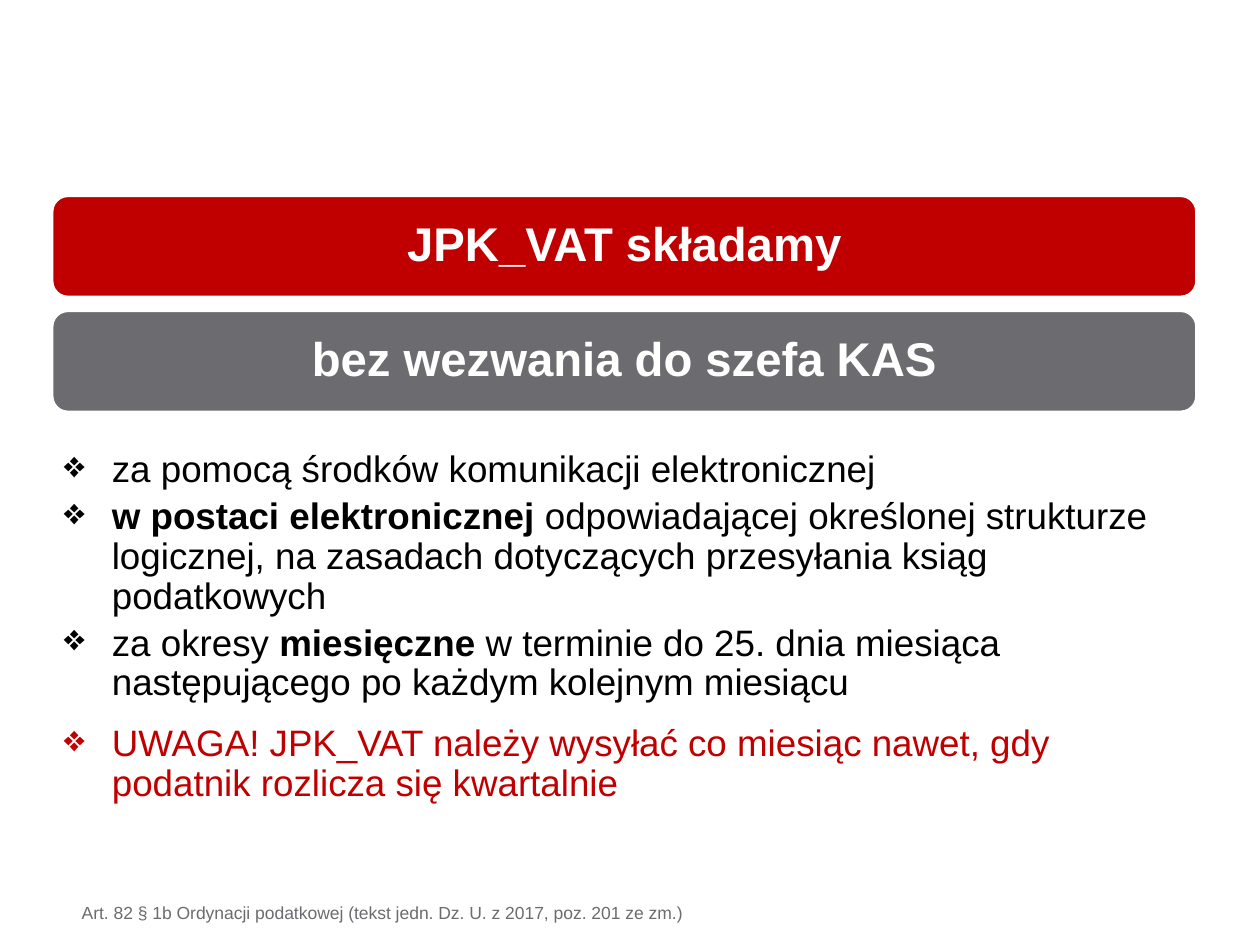
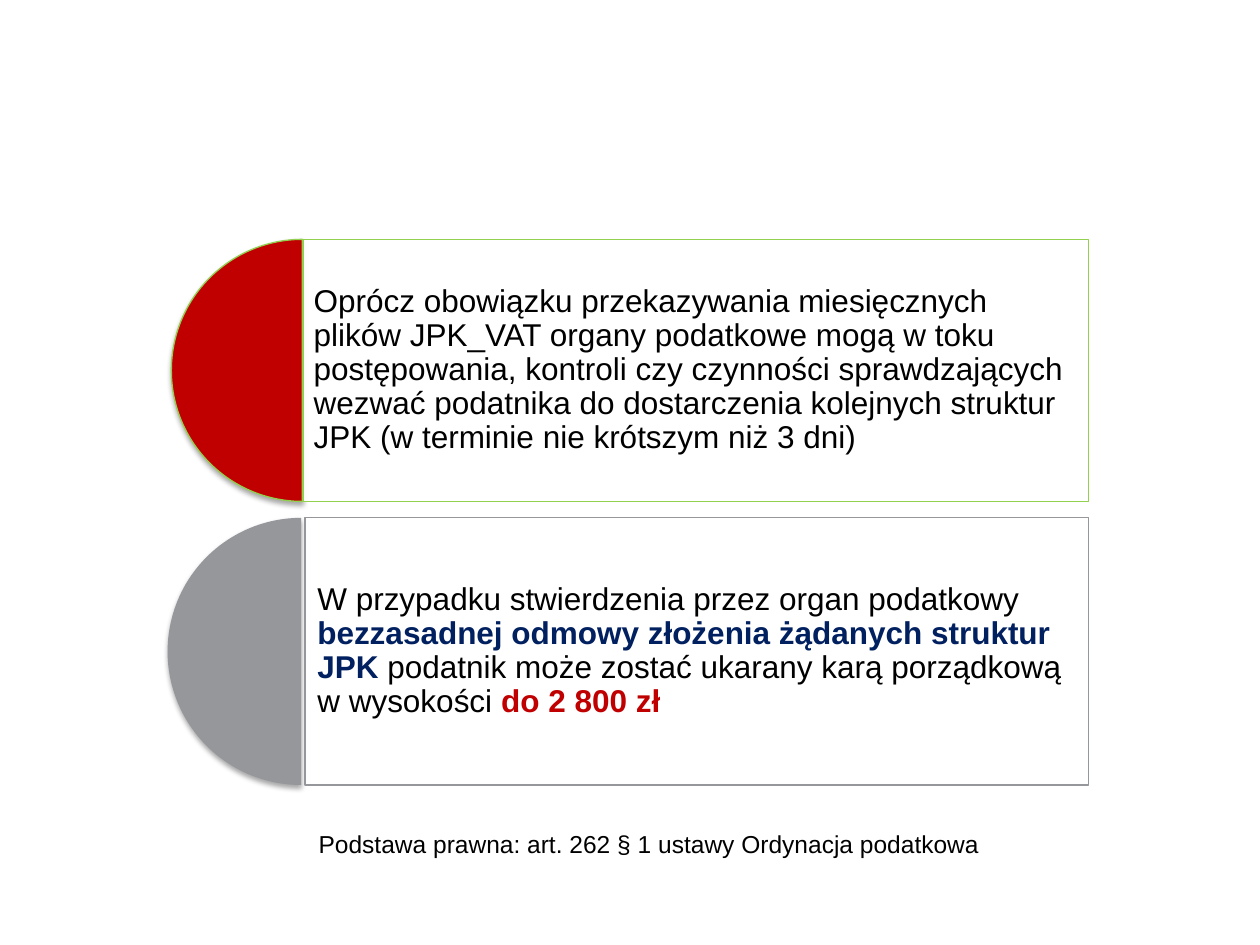
from pptx import Presentation
from pptx.dml.color import RGBColor
from pptx.enum.shapes import MSO_SHAPE
from pptx.enum.text import MSO_ANCHOR, PP_ALIGN
from pptx.oxml import parse_xml
from pptx.oxml.ns import nsdecls
from pptx.util import Inches, Pt

RED = RGBColor(0xC0, 0x00, 0x00)
GREY = RGBColor(0x6C, 0x6C, 0x70)
PALE = RGBColor(0x95, 0x97, 0x9B)
GREEN = RGBColor(0x92, 0xD0, 0x50)
NAVY = RGBColor(0x00, 0x20, 0x60)
BLACK = RGBColor(0x00, 0x00, 0x00)
WHITE = RGBColor(0xFF, 0xFF, 0xFF)
FONT = "Arial"

deck = Presentation()
deck.slide_width = Inches(10)
deck.slide_height = Inches(7.5)
blank = deck.slide_layouts[6]

# Grid of 100 columns by 100 rows
COL = deck.slide_width / 100
ROW = deck.slide_height / 100


def place(slide, kind, left, top, wide, high, fill=None, line=None, width=0.75):
    """Put a shape, or a text box when kind is None, on the grid."""
    spot = [int(n) for n in (left * COL, top * ROW, wide * COL, high * ROW)]
    if kind is None:
        shape = slide.shapes.add_textbox(*spot)
    else:
        shape = slide.shapes.add_shape(kind, *spot)
        shape.shadow.inherit = False
        shape.fill.solid()
        shape.fill.fore_color.rgb = fill
        if line is None:
            shape.line.fill.background()
        else:
            shape.line.color.rgb = line
            shape.line.width = Pt(width)
    shape.text_frame.word_wrap = True
    return shape


def write(para, runs, size):
    """Add runs given as (text, colour, bold)."""
    for text, tone, bold in runs:
        run = para.add_run()
        run.text = text
        run.font.name = FONT
        run.font.size = Pt(size)
        run.font.bold = bold
        run.font.color.rgb = tone


# Slide 1: how the file is sent
slide = deck.slides.add_slide(blank)

# Title bands
bands = [("JPK_VAT składamy", RED), ("bez wezwania do szefa KAS", GREY)]
for i, (text, tone) in enumerate(bands):
    band = place(slide, MSO_SHAPE.ROUNDED_RECTANGLE, 4.1, 20.67 + 12.17 * i,
                 90.9, 10.8, tone, WHITE, 2)
    band.adjustments[0] = 0.16
    frame = band.text_frame
    frame.vertical_anchor = MSO_ANCHOR.MIDDLE
    para = frame.paragraphs[0]
    para.alignment = PP_ALIGN.CENTER
    para.line_spacing = 0.9
    write(para, [(text, WHITE, True)], 27)

# Bullet list: space after, runs
rules = [
    (4.2, [("za pomocą środków komunikacji elektronicznej", BLACK, False)]),
    (4.2, [("w postaci elektronicznej ", BLACK, True),
           ("odpowiadającej określonej strukturze logicznej, na zasadach "
            "dotyczących przesyłania ksiąg podatkowych", BLACK, False)]),
    (12, [("za okresy ", BLACK, False),
          ("miesięczne", BLACK, True),
          (" w terminie do 25. dnia miesiąca następującego po każdym "
           "kolejnym miesiącu", BLACK, False)]),
    (4.2, [("UWAGA! JPK_VAT należy wysyłać co miesiąc nawet, gdy podatnik "
            "rozlicza się kwartalnie", RED, False)]),
]
frame = place(slide, None, 4.1, 47.07, 92, 40).text_frame
for i, (gap, runs) in enumerate(rules):
    para = frame.add_paragraph() if i else frame.paragraphs[0]
    para.line_spacing = 0.9
    para.space_after = Pt(gap)
    props = para._p.get_or_add_pPr()
    props.set("marL", str(Inches(0.38)))
    props.set("indent", str(-Inches(0.38)))
    props.append(parse_xml(f'<a:buChar {nsdecls("a")} char="❖"/>'))
    write(para, runs, 21)

# Legal note
note = place(slide, None, 5.5, 94.8, 51.6, 3.6)
write(note.text_frame.paragraphs[0],
      [("Art. 82 § 1b Ordynacji podatkowej (tekst jedn. Dz. U. z 2017, "
        "poz. 201 ze zm.)", GREY, False)], 10)

# Slide 2: requests and penalty
slide = deck.slides.add_slide(blank)

# Rows: top, height, pie left, pie width, panel left, pad, fill, pie line, panel line, runs
cards = [
    (54.8, 28.27, 13.3, 21.2, 24.2, 0.1, PALE, None, PALE,
     [("W przypadku stwierdzenia przez organ podatkowy ", BLACK, False),
      ("bezzasadnej odmowy złożenia żądanych struktur JPK ", NAVY, True),
      ("podatnik może zostać ukarany karą porządkową w wysokości ", BLACK, False),
      ("do 2 800 zł", RED, True)]),
    (25.33, 27.73, 13.6, 20.8, 24.1, 0.08, RED, GREEN, GREEN,
     [("Oprócz obowiązku przekazywania miesięcznych plików JPK_VAT organy "
       "podatkowe mogą w toku postępowania, kontroli czy czynności "
       "sprawdzających wezwać podatnika do dostarczenia kolejnych struktur "
       "JPK (w terminie nie krótszym niż 3 dni)", BLACK, False)]),
]
for top, high, left, wide, start, pad, fill, edge, rim, runs in cards:
    # Half disc with a soft shadow
    pie = place(slide, MSO_SHAPE.PIE, left, top, wide, high, fill, edge)
    pie.adjustments[0] = 54
    pie.adjustments[1] = 162
    glow = pie._element.spPr.find(".//{*}effectLst")
    glow.append(parse_xml(
        f'<a:outerShdw {nsdecls("a")} blurRad="{Pt(3.1)}" dist="{Pt(1.8)}" '
        'dir="5400000" rotWithShape="0"><a:srgbClr val="000000">'
        '<a:alpha val="35000"/></a:srgbClr></a:outerShdw>'))

    # Text panel, nearly opaque
    panel = place(slide, MSO_SHAPE.RECTANGLE, start, top, 86.4 - start, high,
                  WHITE, rim)
    tint = panel._element.spPr.find("{*}solidFill/{*}srgbClr")
    tint.append(parse_xml(f'<a:alpha {nsdecls("a")} val="90000"/>'))
    frame = panel.text_frame
    frame.vertical_anchor = MSO_ANCHOR.MIDDLE
    frame.margin_left = frame.margin_right = Inches(pad)
    frame.margin_top = frame.margin_bottom = Inches(pad)
    para = frame.paragraphs[0]
    para.alignment = PP_ALIGN.LEFT
    para.line_spacing = 0.9
    write(para, runs, 18)

# Legal basis
basis = place(slide, None, 24.3, 87.07, 67.2, 8.53)
write(basis.text_frame.paragraphs[0],
      [("Podstawa prawna: art. 262 § 1 ustawy Ordynacja podatkowa",
        BLACK, False)], 14)

deck.save("out.pptx")
